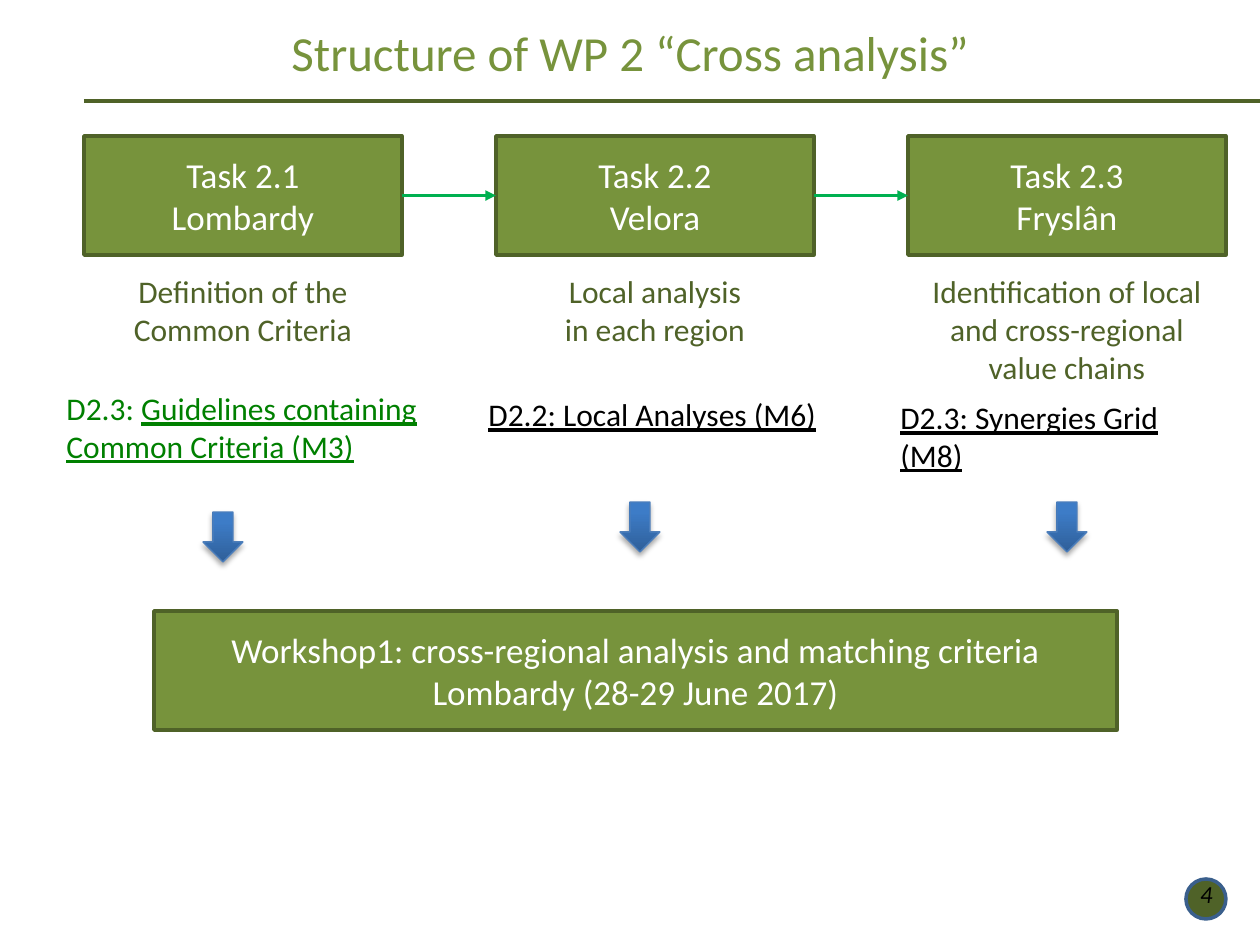
from dataclasses import dataclass

from lxml.etree import SubElement
from pptx import Presentation
from pptx.dml.color import RGBColor
from pptx.enum.shapes import MSO_CONNECTOR, MSO_SHAPE
from pptx.enum.text import MSO_ANCHOR, MSO_AUTO_SIZE, PP_ALIGN
from pptx.oxml.ns import qn
from pptx.util import Pt


@dataclass(frozen=True)
class Theme:
    font: str = "Calibri"
    green: str = "77933C"
    dark: str = "4F6228"
    link: str = "00B050"
    done: str = "008000"
    black: str = "000000"
    white: str = "FFFFFF"
    ring: str = "3A5F8C"
    low: str = "2F5F99"
    high: str = "3D7CC7"
    edge: str = "4B7EBC"
    title: int = 28
    box: int = 20
    body: int = 18
    page: int = 14


THEME = Theme()
SCALE = 914400 / 126
LEFT, STEP, WIDTH = 84, 412, 318

# name, summary, summary height
TASKS = [
    ("Task 2.1\nLombardy", "Definition of the Common Criteria", 89),
    ("Task 2.2\nVelora", "Local analysis\nin each region", 89),
    ("Task 2.3\nFryslân",
     "Identification of local and cross-regional value chains", 127),
]

# plain lead, underlined text, place, colour, alignment
RESULTS = [
    ("D2.3: ", "Guidelines containing Common Criteria (M3)",
     (54, 383, 397, 89), THEME.done, PP_ALIGN.LEFT),
    ("", "D2.2: Local Analyses (M6)",
     (476, 389, 382, 50), THEME.black, PP_ALIGN.JUSTIFY),
    ("", "D2.3: Synergies Grid\n(M8)",
     (888, 392, 372, 89), THEME.black, PP_ALIGN.LEFT),
]

ARROWS = [(203, 512), (620, 502), (1047, 502)]


def px(*sizes):
    return [round(size * SCALE) for size in sizes]


def rgb(code):
    return RGBColor.from_string(code)


def style(frame, size, color, align=PP_ALIGN.CENTER):
    frame.word_wrap = True
    for para in frame.paragraphs:
        para.alignment = align
        for run in para.runs:
            run.font.name = THEME.font
            run.font.size = Pt(size)
            run.font.color.rgb = rgb(color)


def add_title(slide, text):
    title = slide.shapes.title
    title.left, title.top, title.width, title.height = px(0, 16, 1260, 84)
    title.text_frame.text = text
    title.text_frame.vertical_anchor = MSO_ANCHOR.TOP
    style(title.text_frame, THEME.title, THEME.green)


def add_form(slide, kind, place, line, width):
    form = slide.shapes.add_shape(kind, *px(*place))
    form.shadow.inherit = False
    form.line.color.rgb = rgb(line)
    form.line.width = Pt(width)
    return form


def add_box(slide, text, place):
    box = add_form(slide, MSO_SHAPE.RECTANGLE, place, THEME.dark, 2)
    box.fill.solid()
    box.fill.fore_color.rgb = rgb(THEME.green)
    box.text_frame.text = text
    box.text_frame.vertical_anchor = MSO_ANCHOR.MIDDLE
    style(box.text_frame, THEME.box, THEME.white)
    return box


def add_text(slide, text, place, color, align=PP_ALIGN.CENTER):
    frame = slide.shapes.add_textbox(*px(*place)).text_frame
    frame.text = text
    frame.auto_size = MSO_AUTO_SIZE.SHAPE_TO_FIT_TEXT
    style(frame, THEME.body, color, align)
    return frame


def add_result(slide, lead, text, place, color, align):
    """Add a deliverable, underlined after its plain lead."""
    frame = add_text(slide, lead or text, place, color, align)
    if lead:
        frame.paragraphs[0].add_run().text = text
        style(frame, THEME.body, color, align)
    for para in frame.paragraphs:
        para.runs[-1].font.underline = True


def add_line(slide, ends, color, width):
    line = slide.shapes.add_connector(MSO_CONNECTOR.STRAIGHT, *px(*ends))
    line.line.color.rgb = rgb(color)
    line.line.width = Pt(width)
    SubElement(line._element.spPr, qn("a:effectLst"))
    return line


def add_link(slide, start, end):
    """Join two boxes, right side to left side, with an arrow."""
    link = add_line(slide, (0, 0, 0, 0), THEME.link, 2)
    link.begin_connect(start, 3)
    link.end_connect(end, 1)
    SubElement(link.line._get_or_add_ln(), qn("a:tailEnd"), type="triangle")


def add_arrow(slide, left, top):
    arrow = add_form(slide, MSO_SHAPE.DOWN_ARROW, (left, top, 40, 50),
                     THEME.edge, 0.75)
    arrow.fill.gradient()
    arrow.fill.gradient_angle = 90
    stops = arrow.fill.gradient_stops
    for stop, color, place in zip(stops, (THEME.low, THEME.high), (0, 0.8)):
        stop.color.rgb = rgb(color)
        stop.position = place
    effects = arrow._element.spPr.find(qn("a:effectLst"))
    shade = SubElement(effects, qn("a:outerShdw"), blurRad=str(Pt(3.1)),
                       dist=str(Pt(1.8)), dir="5400000", rotWithShape="0")
    color = SubElement(shade, qn("a:srgbClr"), val=THEME.black)
    SubElement(color, qn("a:alpha"), val="35000")


def add_page(slide, number):
    disc = add_form(slide, MSO_SHAPE.OVAL, (1186, 879, 40, 40), THEME.ring, 2)
    disc.fill.solid()
    disc.fill.fore_color.rgb = rgb(THEME.dark)
    frame = slide.shapes.add_textbox(*px(1159, 869, 66, 50)).text_frame
    frame.text = number
    frame.vertical_anchor = MSO_ANCHOR.MIDDLE
    style(frame, THEME.page, THEME.black, PP_ALIGN.RIGHT)
    frame.paragraphs[0].runs[0].font.italic = True


def main():
    deck = Presentation()
    deck.slide_width, deck.slide_height = px(1260, 945)
    slide = deck.slides.add_slide(deck.slide_layouts[5])

    add_page(slide, "4")
    add_title(slide, "Structure of WP 2 “Cross analysis”")
    add_line(slide, (LEFT, 101, 1260, 101), THEME.dark, 2.25)

    boxes = []
    for col, (name, text, height) in enumerate(TASKS):
        left = LEFT + col * STEP
        boxes.append(add_box(slide, name, (left, 136, WIDTH, 119)))
        add_text(slide, text, (left, 266, WIDTH, height), THEME.dark)
    for start, end in zip(boxes, boxes[1:]):
        add_link(slide, start, end)
    for result in RESULTS:
        add_result(slide, *result)
    for left, top in ARROWS:
        add_arrow(slide, left, top)

    add_box(slide, "Workshop1: cross-regional analysis and matching criteria\v"
            "Lombardy (28-29 June 2017)", (154, 611, 963, 119))
    deck.save("out.pptx")


if __name__ == "__main__":
    main()
